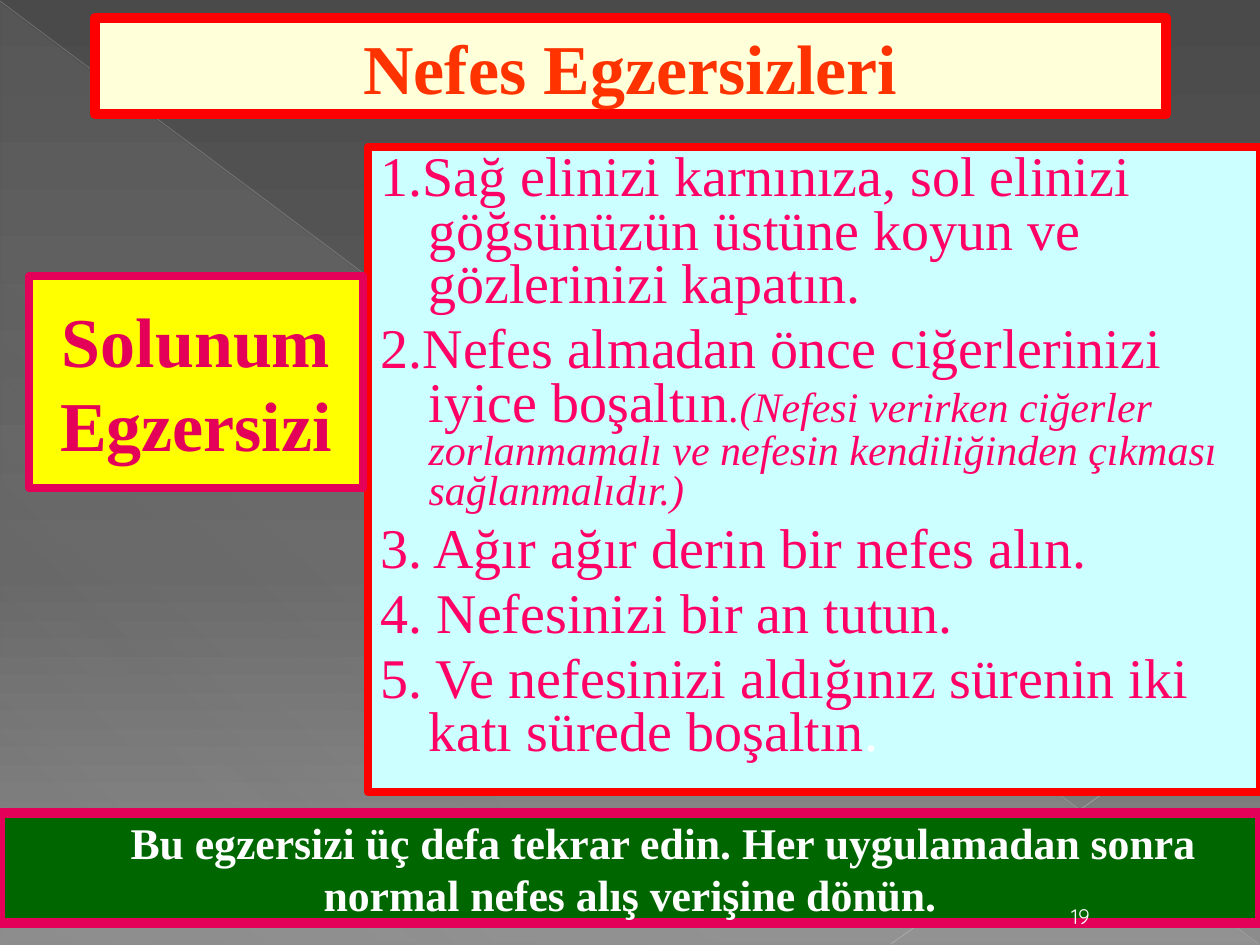
import lxml.etree
import pptx
import pptx.dml.color
import pptx.enum.shapes
import pptx.enum.text
import pptx.oxml
import pptx.oxml.ns
import pptx.util

EMU_PER_PX = 914400 / 126
THEME = {
    "serif": "Times New Roman", "sans": "Quicksand",
    "red": "FF0000", "orange": "FF3300", "pink": "FF0066", "crimson": "E40059",
    "cream": "FFFFD9", "cyan": "CCFFFF", "yellow": "FFFF00", "green": "006600", "white": "FFFFFF",
    "heading": 40, "body": 32, "note": 24, "footer": 25, "number": 12,
}
ALIGN = pptx.enum.text.PP_ALIGN
ANCHOR = pptx.enum.text.MSO_ANCHOR
SHAPE = pptx.enum.shapes.MSO_SHAPE
rgb = pptx.dml.color.RGBColor.from_string
qn = pptx.oxml.ns.qn


def px(length):
    return pptx.util.Emu(round(length * EMU_PER_PX))


def set_gradient(fill, stops, degrees):
    """Fill with (position %, colour, opacity %) stops, angle clockwise."""
    fill.gradient()
    stop_list = fill._fill._gradFill.find(qn("a:gsLst"))
    for old_stop in list(stop_list):
        stop_list.remove(old_stop)
    for position, colour, opacity in stops:
        stop = lxml.etree.SubElement(stop_list, qn("a:gs"), pos=str(position * 1000))
        color = lxml.etree.SubElement(stop, qn("a:srgbClr"), val=colour)
        lxml.etree.SubElement(color, qn("a:alpha"), val=str(opacity * 1000))
    fill._fill._gradFill.find(qn("a:lin")).set("ang", str(degrees * 60000))


deck = pptx.Presentation()
deck.slide_width, deck.slide_height = px(1260), px(945)
page = deck.slides.add_slide(deck.slide_layouts[1])
shapes = page.shapes

# Backdrop: gradient, pale triangle and two thin diagonals
set_gradient(page.background.fill, [(0, "4A4A4A", 100), (60, "626262", 100), (100, "8C8C8C", 100)], 90)
triangle = shapes.add_shape(SHAPE.RIGHT_TRIANGLE, px(1), px(3), px(1258), px(942))
triangle.shadow.inherit = False
triangle.line.fill.background()
set_gradient(triangle.fill, [(0, "D2D2D2", 10), (70, "D2D2D2", 8), (100, "D2D2D2", 1)], 133)

for ends, colour, width, opacity in [
    ((0, 1, 1259, 944), "BFBFBF", 0.39, 35),
    ((1260, 682, 891, 944), "C6C6C6", 0.47, 45),
]:
    diagonal = shapes.add_connector(pptx.enum.shapes.MSO_CONNECTOR.STRAIGHT, *map(px, ends))
    diagonal.line.width = pptx.util.Pt(width)
    diagonal.line.color.rgb = rgb(colour)
    color = diagonal.line._ln.find(".//" + qn("a:srgbClr"))
    lxml.etree.SubElement(color, qn("a:alpha"), val=str(opacity * 1000))
    lxml.etree.SubElement(diagonal._element.spPr, qn("a:effectLst"))

# Framed boxes; the placeholders are brought in front of the backdrop
title, body = shapes.title, page.placeholders[1]
for placeholder in (title, body):
    shapes._spTree.append(placeholder._element)
exercise = shapes.add_shape(SHAPE.RECTANGLE, 0, 0, 0, 0)
reminder = shapes.add_shape(SHAPE.RECTANGLE, 0, 0, 0, 0)
number = shapes.add_textbox(0, 0, 0, 0)

for box, area, fill, border, width, anchor in [
    (title, (95, 18, 1071, 96), "cream", "red", 6, ANCHOR.MIDDLE),
    (body, (368, 147, 892, 645), "cyan", "red", 4.5, ANCHOR.TOP),
    (exercise, (29, 276, 334, 212), "yellow", "crimson", 4.5, ANCHOR.MIDDLE),
    (reminder, (0, 813, 1260, 110), "green", "crimson", 6, ANCHOR.MIDDLE),
    (number, (1046, 893, 69, 42), None, None, 0, ANCHOR.BOTTOM),
]:
    box.left, box.top, box.width, box.height = map(px, area)
    if fill:
        box.fill.solid()
        box.fill.fore_color.rgb = rgb(THEME[fill])
        box.line.color.rgb = rgb(THEME[border])
        box.line.width = pptx.util.Pt(width)
    if box in (exercise, reminder):
        box.shadow.inherit = False
    frame_format = {"word_wrap": True, "auto_size": pptx.enum.text.MSO_AUTO_SIZE.NONE,
                    "vertical_anchor": anchor}
    for name, value in frame_format.items():
        setattr(box.text_frame, name, value)

# Text: each paragraph is a list of (wording, size, colour, extra format)
steps = [
    [("1.Sağ elinizi karnınıza, sol elinizi göğsünüzün üstüne koyun ve gözlerinizi kapatın.",
      "body", "pink", {})],
    [("2.Nefes almadan önce ciğerlerinizi iyice boşaltın", "body", "pink", {}),
     (".(Nefesi verirken ciğerler zorlanmamalı ve nefesin kendiliğinden çıkması sağlanmalıdır.)",
      "note", "pink", {"italic": True})],
    [("3. Ağır ağır derin bir nefes alın.", "body", "pink", {})],
    [("4. Nefesinizi bir an tutun.", "body", "pink", {})],
    [("5. Ve nefesinizi aldığınız sürenin iki katı sürede boşaltın", "body", "pink", {}),
     (".", "body", "white", {})],
]
bold = {"bold": True}
centred = {"alignment": ALIGN.CENTER}
listed = {"alignment": ALIGN.LEFT, "line_spacing": 0.8, "space_before": pptx.util.Pt(6.4)}

for box, paragraphs, para_format, margin, indent in [
    (title, [[("Nefes Egzersizleri", "heading", "orange", bold)]], centred, 0, 0),
    (body, steps, listed, 48, -48),
    (exercise, [[("Solunum Egzersizi", "heading", "crimson", bold)]], centred, 0, 0),
    (reminder, [[("Bu egzersizi üç defa tekrar edin. Her uygulamadan sonra normal nefes alış "
                  "verişine dönün.", "footer", "white", bold)]], centred, 0, 66),
    (number, [[("19", "number", "white", {"name": THEME["sans"]})]], centred, 0, 0),
]:
    frame = box.text_frame
    for index, pieces in enumerate(paragraphs):
        para = frame.add_paragraph() if index else frame.paragraphs[0]
        for name, value in para_format.items():
            setattr(para, name, value)
        properties = para._p.get_or_add_pPr()
        properties.set("marL", str(px(margin)))
        properties.set("indent", str(px(indent)))
        lxml.etree.SubElement(properties, qn("a:buNone"))
        for wording, size, colour, extra in pieces:
            span = para.add_run()
            span.text = wording
            span.font.color.rgb = rgb(THEME[colour])
            span_format = {"name": THEME["serif"], "size": pptx.util.Pt(THEME[size])} | extra
            for name, value in span_format.items():
                setattr(span.font, name, value)

deck.save("out.pptx")
